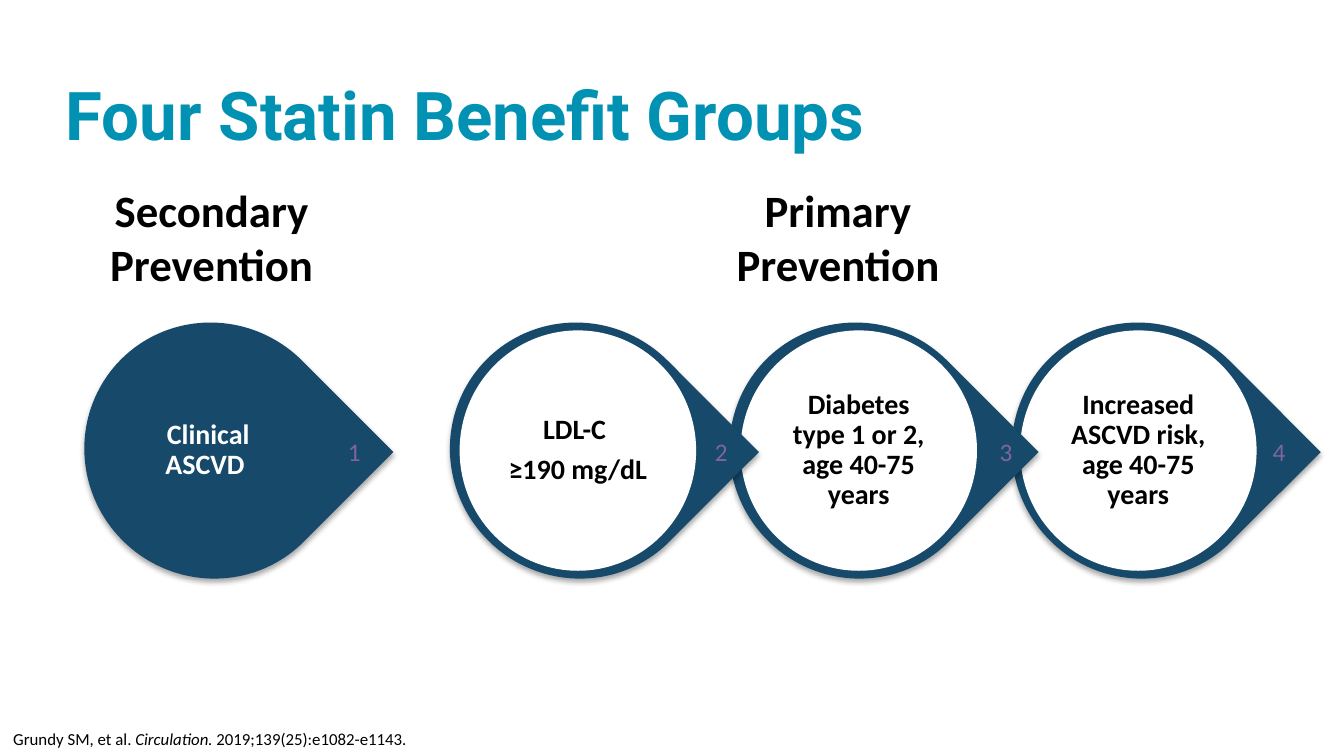
import pptx
import pptx.dml.color
import pptx.enum.shapes
import pptx.enum.text
import pptx.oxml
import pptx.oxml.ns
import pptx.util

RGBColor = pptx.dml.color.RGBColor
NAVY = RGBColor(0x17, 0x49, 0x6B)
TEAL = RGBColor(0x00, 0x91, 0xB3)
PURPLE = RGBColor(0x80, 0x64, 0xA2)
BLACK = RGBColor(0, 0, 0)
WHITE = RGBColor(255, 255, 255)
WIDTH = pptx.util.Inches(10)
HEIGHT = WIDTH * 9 // 16
SHAPE = pptx.enum.shapes.MSO_SHAPE
ALIGN = pptx.enum.text.PP_ALIGN
NS = pptx.oxml.ns.nsdecls("a")
SHADOW = (
    f'<a:effectLst {NS}><a:outerShdw blurRad="39400" dist="22900" dir="5400000" '
    'rotWithShape="0"><a:srgbClr val="000000"><a:alpha val="35000"/>'
    "</a:srgbClr></a:outerShdw></a:effectLst>"
)


def place(left, top, width, height):
    """Turn percentages of the slide into a position and size."""
    return [int(share * full / 100) for share, full in
            zip((left, top, width, height), (WIDTH, HEIGHT, WIDTH, HEIGHT))]


def write(tf, lines, size, color, bold=False, font="Calibri", align=ALIGN.LEFT,
          spacing=None, after=None):
    """Write lines, each a list of (text, italic) runs, into a text frame."""
    for i, line in enumerate(lines):
        p = tf.add_paragraph() if i else tf.paragraphs[0]
        p.alignment = align
        p.line_spacing = spacing
        p.space_after = after
        for text, italic in line:
            r = p.add_run()
            r.text = text
            r.font.name = font
            r.font.size = pptx.util.Pt(size)
            r.font.bold = bold
            r.font.italic = italic
            r.font.color.rgb = color


def plain(*lines):
    """Make single-run upright lines."""
    return [[(line, False)] for line in lines]


def add_label(s, box, lines, size, color, **style):
    """Add an unwrapped label that grows with its text."""
    tf = s.shapes.add_textbox(*place(*box)).text_frame
    tf.word_wrap = False
    tf.auto_size = pptx.enum.text.MSO_AUTO_SIZE.SHAPE_TO_FIT_TEXT
    write(tf, lines, size, color, **style)


def add_title(s, text):
    """Add the slide title."""
    tf = s.shapes.add_textbox(*place(4.9, 10.95, 90, 13.87)).text_frame
    tf.word_wrap = True
    tf.margin_left = tf.margin_top = tf.margin_right = tf.margin_bottom = 0
    write(tf, plain(text), 36, TEAL, bold=True, font="Roboto", spacing=0.9)


def add_solid(s, kind, box, color):
    """Add a filled preset shape without an outline."""
    sp = s.shapes.add_shape(kind, *place(*box))
    sp.shadow.inherit = False
    sp.fill.solid()
    sp.fill.fore_color.rgb = color
    sp.line.fill.background()
    return sp


def add_drop(s, drop_left, disc_left, lines, disc_color, text_color):
    """Add a right-pointing drop with a text disc on it."""
    drop = add_solid(s, SHAPE.TEAR, (drop_left, 42.8, 19.2, 33.6), NAVY)
    drop.rotation = 45
    effects = drop._element.spPr.find(pptx.oxml.ns.qn("a:effectLst"))
    effects.getparent().replace(effects, pptx.oxml.parse_xml(SHADOW))

    disc = add_solid(s, SHAPE.OVAL, (disc_left, 43.7, 17.6, 31.8), disc_color)
    tf = disc.text_frame
    tf.word_wrap = True
    tf.vertical_anchor = pptx.enum.text.MSO_ANCHOR.MIDDLE
    tf.margin_left = tf.margin_right = pptx.util.Inches(0.06)
    tf.margin_top = tf.margin_bottom = pptx.util.Inches(0.06)
    write(tf, plain(*lines), 15, text_color, bold=True, align=ALIGN.CENTER,
          spacing=0.9, after=pptx.util.Pt(5))


def main():
    """Build the slide and save it."""
    prs = pptx.Presentation()
    prs.slide_width, prs.slide_height = WIDTH, HEIGHT
    s = prs.slides.add_slide(prs.slide_layouts[6])

    add_title(s, "Four Statin Benefit Groups")
    for left, kind in ((7.1, "Secondary"), (53.7, "Primary")):
        add_label(s, (left, 23.3, 17.3, 16.18), plain(kind, "Prevention"),
                  24, BLACK, bold=True, align=ALIGN.CENTER)

    add_drop(s, 6.2, 6.7, ["Clinical ASCVD "], NAVY, WHITE)
    primary = [
        (75.2, 75.9, ["Increased ASCVD risk, age 40-75 years"]),
        (54.2, 55.1, ["Diabetes type 1 or 2, age 40-75 years"]),
        (33.4, 34.2, ["LDL-C ", "≥190 mg/dL"]),
    ]
    for drop_left, disc_left, lines in primary:
        add_drop(s, drop_left, disc_left, lines, WHITE, BLACK)

    for number, left in enumerate((24.9, 52.2, 73.4, 93.7), start=1):
        add_label(s, (left, 56.89, 3, 5.87), plain(str(number)), 13.5, PURPLE)

    citation = [("Grundy SM, et al. ", False), ("Circulation.", True),
                (" 2019;139(25):e1082-e1143.", False)]
    add_label(s, (0, 95.55, 31.5, 4.44), [citation], 9, BLACK)
    prs.save("out.pptx")


if __name__ == "__main__":
    main()
